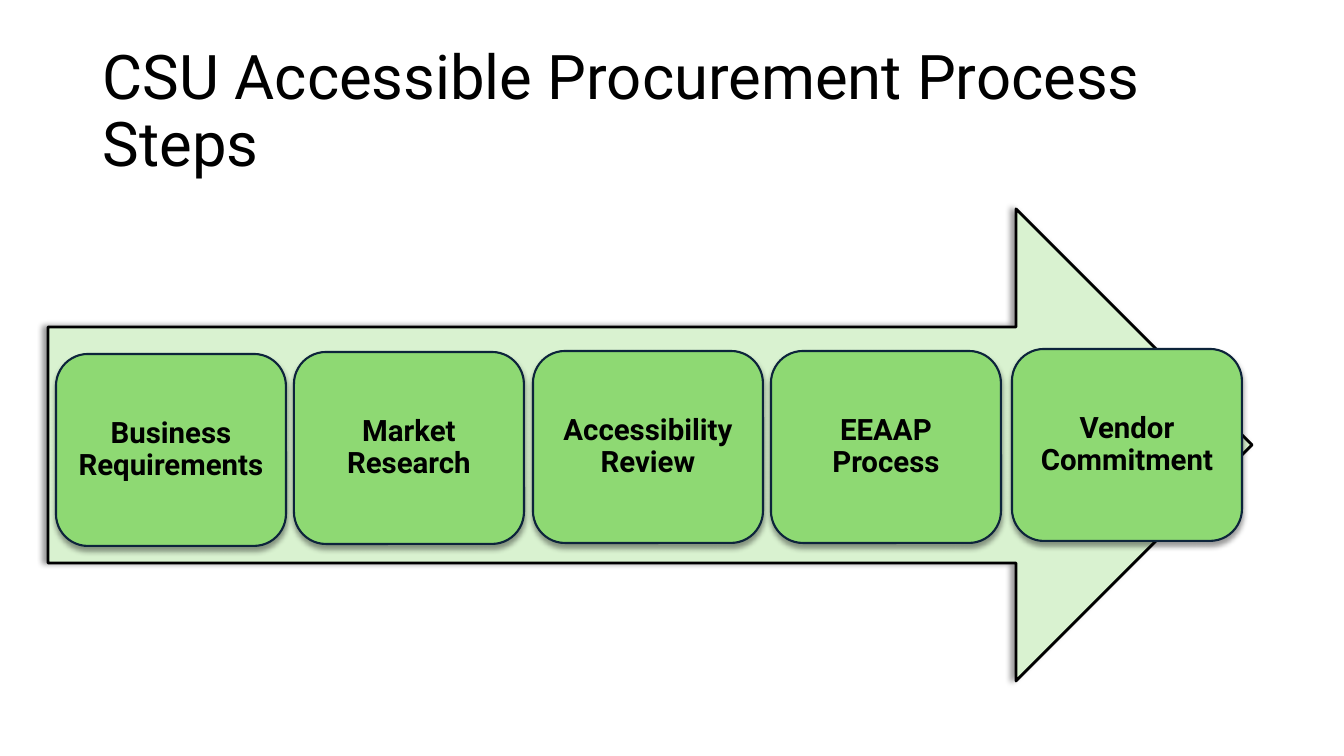
from lxml.etree import SubElement
from pptx import Presentation
from pptx.dml.color import RGBColor
from pptx.enum.shapes import MSO_SHAPE as SHAPE
from pptx.enum.text import MSO_ANCHOR as ANCHOR, PP_ALIGN as ALIGN
from pptx.oxml.ns import qn
from pptx.util import Emu, Pt

EMU_PER_PX = 914400 / 100.8
BLACK = RGBColor(0x00, 0x00, 0x00)
NAVY = RGBColor(0x0D, 0x24, 0x3B)
PALE_GREEN = RGBColor(0xD9, 0xF2, 0xD0)
GREEN = RGBColor(0x8E, 0xD9, 0x73)

STEPS = [
    (56, 354, "Business Requirements"),
    (294, 352, "Market Research"),
    (533, 351, "Accessibility Review"),
    (771, 351, "EEAAP Process"),
    (1012, 349, "Vendor Commitment"),
]


def px(n):
    return Emu(round(n * EMU_PER_PX))


class SlideBuilder:
    """Hold the text style and the current slide, and add elements to it."""

    font = "Roboto"
    color = BLACK

    def __init__(self, prs):
        self.s = prs.slides.add_slide(prs.slide_layouts[6])

    def add_text(self, sp, text, size, bold=False, align=ALIGN.LEFT):
        tf = sp.text_frame
        tf.word_wrap = True
        tf.vertical_anchor = ANCHOR.MIDDLE
        p = tf.paragraphs[0]
        p.alignment = align
        p.line_spacing = 0.9
        r = p.add_run()
        r.text = text
        r.font.name = self.font
        r.font.size = Pt(size)
        r.font.bold = bold
        r.font.color.rgb = self.color

    def title(self, x, y, w, h, text):
        sp = self.s.shapes.add_textbox(px(x), px(y), px(w), px(h))
        self.add_text(sp, text, 44)

    def shape(self, kind, x, y, w, h, fill, line, weight, shadow_angle):
        sp = self.s.shapes.add_shape(kind, px(x), px(y), px(w), px(h))
        sp.fill.solid()
        sp.fill.fore_color.rgb = fill
        sp.line.color.rgb = line
        sp.line.width = Pt(weight)
        self.shadow(sp, shadow_angle)
        return sp

    def shadow(self, sp, angle):
        sp.shadow.inherit = False
        effects = sp._element.spPr.find(qn("a:effectLst"))
        outer = SubElement(effects, qn("a:outerShdw"), blurRad=str(Pt(4)),
                           dist=str(Pt(3)), dir=str(angle * 60000), rotWithShape="0")
        clr = SubElement(outer, qn("a:srgbClr"), val=str(BLACK))
        SubElement(clr, qn("a:alpha"), val="40000")

    def arrow(self, x, y, w, h):
        self.shape(SHAPE.RIGHT_ARROW, x, y, w, h, PALE_GREEN, BLACK, 2, 180)

    def step(self, x, y, text):
        sp = self.shape(SHAPE.ROUNDED_RECTANGLE, x, y, 230, 192, GREEN, NAVY, 1.5, 90)
        tf = sp.text_frame
        tf.margin_left = tf.margin_right = tf.margin_top = tf.margin_bottom = px(9)
        self.add_text(sp, text, 21, True, ALIGN.CENTER)


def main():
    prs = Presentation()
    prs.slide_width, prs.slide_height = px(1344), px(756)
    slide = SlideBuilder(prs)
    slide.title(93, 40, 1159, 146, "CSU Accessible Procurement Process Steps")
    slide.arrow(48, 209, 1204, 472)
    for x, y, text in STEPS:
        slide.step(x, y, text)
    prs.save("out.pptx")


if __name__ == "__main__":
    main()
